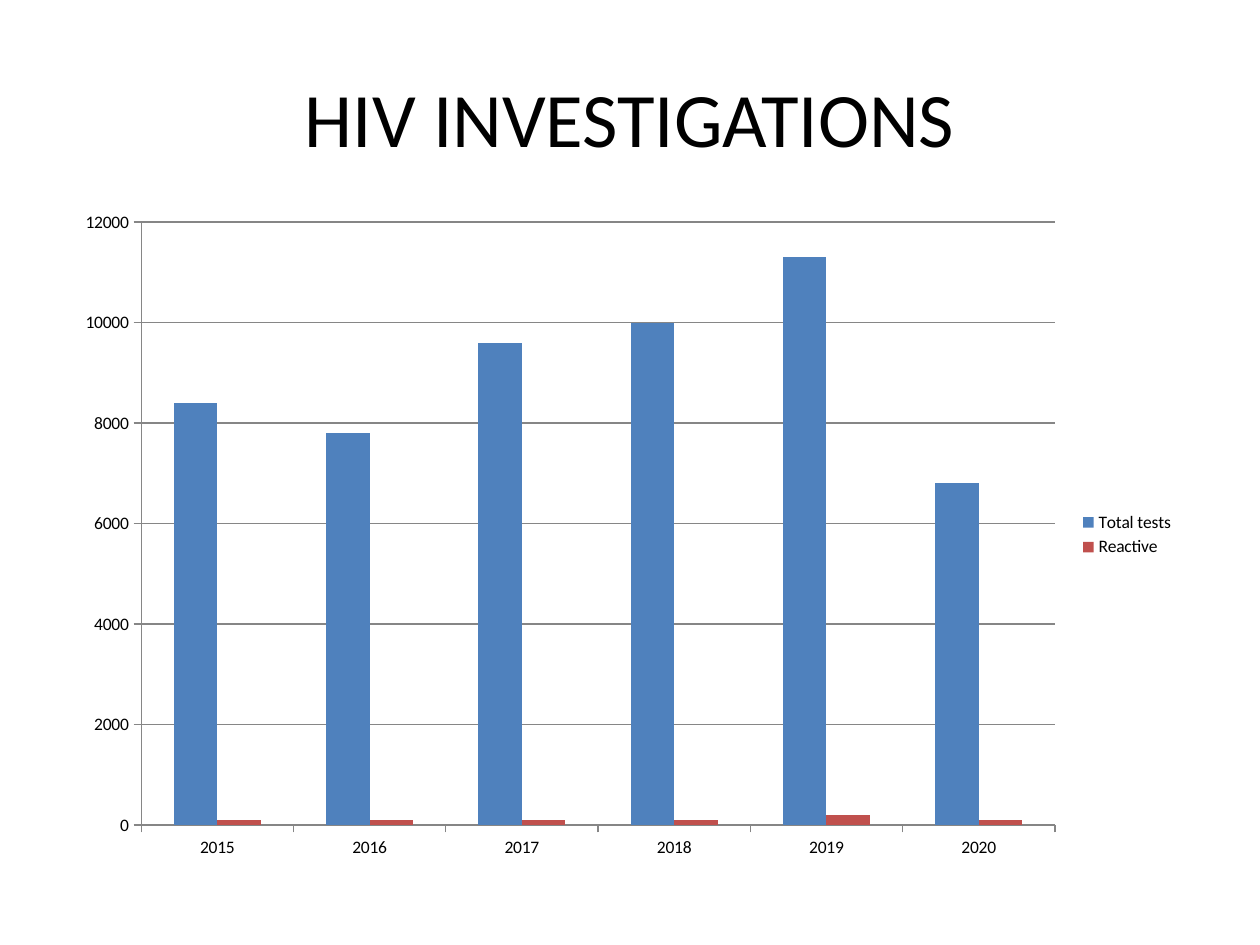
from pptx import Presentation
from pptx.chart.data import CategoryChartData
from pptx.dml.color import RGBColor
from pptx.enum.chart import XL_CHART_TYPE, XL_LEGEND_POSITION, XL_TICK_MARK
from pptx.enum.text import MSO_ANCHOR, PP_ALIGN
from pptx.util import Cm, Pt

TITLE = "HIV INVESTIGATIONS"
YEARS = ["2015", "2016", "2017", "2018", "2019", "2020"]
BLACK = RGBColor(0x00, 0x00, 0x00)
GRAY = RGBColor(0x86, 0x86, 0x86)
BLUE = RGBColor(0x4F, 0x81, 0xBD)
RED = RGBColor(0xC0, 0x50, 0x4D)
SERIES = [
    ("Total tests", BLUE, [8400, 7800, 9600, 10000, 11300, 6800]),
    ("Reactive", RED, [100, 100, 100, 100, 200, 100]),
]
FONT = "Calibri"


def format_font(font, size):
    font.name = FONT
    font.size = Pt(size)
    font.color.rgb = BLACK


def write(sp, text, size=44, align=PP_ALIGN.CENTER, anchor=MSO_ANCHOR.MIDDLE):
    tf = sp.text_frame
    tf.word_wrap = True
    tf.vertical_anchor = anchor
    p = tf.paragraphs[0]
    p.alignment = align
    r = p.add_run()
    r.text = text
    format_font(r.font, size)


def add_column_chart(s):
    data = CategoryChartData()
    data.categories = YEARS
    for name, _, values in SERIES:
        data.add_series(name, values)
    chart = s.shapes.add_chart(
        XL_CHART_TYPE.COLUMN_CLUSTERED,
        Cm(1.27), Cm(4.01), Cm(22.66), Cm(13.54), data).chart
    format_font(chart.font, 10)
    chart.has_title = False
    chart.has_legend = True
    chart.legend.position = XL_LEGEND_POSITION.RIGHT
    chart.legend.include_in_layout = False

    plot = chart.plots[0]
    plot.vary_by_categories = False
    plot.gap_width = 150
    plot.overlap = 0
    for series, (_, color, _) in zip(plot.series, SERIES):
        series.format.fill.solid()
        series.format.fill.fore_color.rgb = color

    for axis in (chart.category_axis, chart.value_axis):
        axis.major_tick_mark = XL_TICK_MARK.OUTSIDE
        axis.minor_tick_mark = XL_TICK_MARK.NONE
        axis.format.line.color.rgb = GRAY
    axis = chart.value_axis
    axis.minimum_scale, axis.maximum_scale, axis.major_unit = 0, 12000, 2000
    axis.has_major_gridlines = True
    axis.major_gridlines.format.line.color.rgb = GRAY


def main():
    prs = Presentation()
    prs.slide_width, prs.slide_height = Cm(25.4), Cm(19.05)
    s = prs.slides.add_slide(prs.slide_layouts[5])
    title = s.shapes.title
    title.left, title.top = Cm(1.27), Cm(0.76)
    title.width, title.height = Cm(22.86), Cm(3.18)
    write(title, TITLE)
    add_column_chart(s)
    prs.save("out.pptx")


if __name__ == "__main__":
    main()
